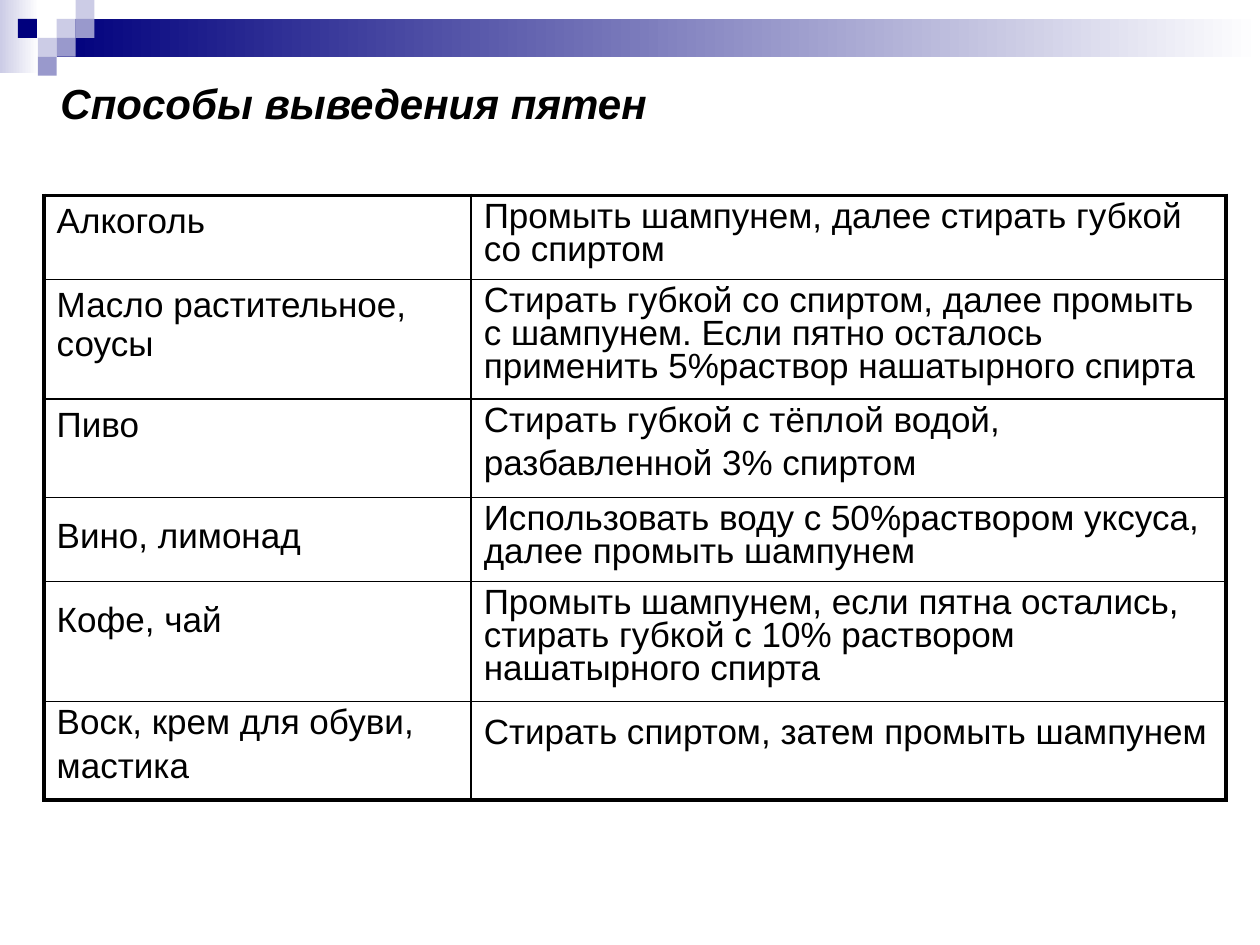
from dataclasses import dataclass

from lxml import etree
from pptx import Presentation
from pptx.dml.color import RGBColor
from pptx.enum.shapes import MSO_SHAPE
from pptx.oxml.ns import qn
from pptx.util import Inches, Pt

RECTANGLE = MSO_SHAPE.RECTANGLE


@dataclass(frozen=True)
class Theme:
    font: str = "Arial"
    ink: str = "000000"
    paper: str = "FFFFFF"
    navy: str = "00007D"
    violet: str = "9999CC"
    lilac: str = "CCCCE6"
    title_size: int = 24
    body_size: int = 20
    space_size: int = 28
    outer_line: float = 2.25
    inner_line: float = 1
    tight: float = 0.85


THEME = Theme()

TITLE = "Способы выведения пятен"

# Each cell: text, tight line spacing, taller closing space
ROWS = [
    (("Алкоголь", False, False),
     ("Промыть шампунем, далее стирать губкой со спиртом", True, False)),
    (("Масло растительное, соусы", False, False),
     ("Стирать губкой со спиртом, далее промыть с шампунем. Если пятно "
      "осталось применить 5%раствор нашатырного спирта", True, False)),
    (("Пиво", False, False),
     ("Стирать губкой с тёплой водой, разбавленной 3% спиртом", True, True)),
    (("Вино, лимонад", False, True),
     ("Использовать воду с 50%раствором уксуса, далее промыть шампунем",
      True, False)),
    (("Кофе, чай", False, True),
     ("Промыть шампунем, если пятна остались, стирать губкой с 10% раствором "
      "нашатырного спирта", True, False)),
    (("Воск, крем для обуви, мастика", True, True),
     ("Стирать спиртом, затем промыть шампунем", True, True)),
]
COLUMN_WIDTHS = [3.39, 5.99]
ROW_HEIGHTS = [0.66, 0.95, 0.78] * 2
TABLE_LEFT, TABLE_TOP = 0.35, 1.55

# Left, top, width, height, colour at the left end
FADING_BANDS = [
    (0, 0, 0.31, 0.58, THEME.lilac),
    (0.45, 0.15, 9.55, 0.3, THEME.navy),
]
TILE = 0.15
# Left and top counted in tiles, colour
TILES = [
    (3, 1, THEME.lilac),
    (4, 0, THEME.lilac),
    (4, 1, THEME.violet),
    (2, 2, THEME.lilac),
    (0.95, 1, THEME.navy),
    (3, 2, THEME.violet),
    (2, 3, THEME.violet),
]


def color(value):
    return RGBColor.from_string(value)


def add_rectangle(page, left, top, width, height):
    box = page.shapes.add_shape(
        RECTANGLE, Inches(left), Inches(top), Inches(width), Inches(height))
    box.shadow.inherit = False
    box.line.fill.background()
    return box


def add_decoration(page):
    for *place, start in FADING_BANDS:
        fill = add_rectangle(page, *place).fill
        fill.gradient()
        fill.gradient_angle = 0
        for stop, shade in zip(fill.gradient_stops, (start, THEME.paper)):
            stop.color.rgb = color(shade)
    for column, row, shade in TILES:
        fill = add_rectangle(page, column * TILE, row * TILE, TILE, TILE).fill
        fill.solid()
        fill.fore_color.rgb = color(shade)


def add_span(para, text, size, emphasis=False):
    span = para.add_run()
    span.text = text
    span.font.name = THEME.font
    span.font.size = Pt(size)
    span.font.color.rgb = color(THEME.ink)
    span.font.bold = span.font.italic = emphasis


def add_title(page):
    box = page.shapes.add_textbox(
        Inches(0.27), Inches(0.64), Inches(9.45), Inches(0.6))
    frame = box.text_frame
    frame.word_wrap = True
    frame.margin_left = Inches(0.21)
    para = frame.paragraphs[0]
    para.line_spacing = 0.8
    add_span(para, TITLE, THEME.title_size, emphasis=True)


def set_borders(cell, widths):
    """Draw the cell's edges; widths maps lnL, lnR, lnT, lnB to points."""
    properties = cell._tc.get_or_add_tcPr()
    for index, (edge, width) in enumerate(widths.items()):
        line = etree.Element(qn(f"a:{edge}"), w=str(Pt(width)))
        fill = etree.SubElement(line, qn("a:solidFill"))
        etree.SubElement(fill, qn("a:srgbClr"), val=THEME.ink)
        properties.insert(index, line)


def add_stain_table(page):
    table = page.shapes.add_table(
        len(ROWS), len(COLUMN_WIDTHS), Inches(TABLE_LEFT), Inches(TABLE_TOP),
        Inches(sum(COLUMN_WIDTHS)), Inches(sum(ROW_HEIGHTS))).table
    table.first_row = table.horz_banding = False
    for column, width in zip(table.columns, COLUMN_WIDTHS):
        column.width = Inches(width)
    for row, height in zip(table.rows, ROW_HEIGHTS):
        row.height = Inches(height)

    last_row, last_column = len(ROWS) - 1, len(COLUMN_WIDTHS) - 1
    for r, row in enumerate(ROWS):
        for c, (text, is_tight, has_tall_space) in enumerate(row):
            cell = table.cell(r, c)
            cell.fill.background()
            para = cell.text_frame.paragraphs[0]
            if is_tight:
                para.line_spacing = THEME.tight
            add_span(para, text, THEME.body_size)
            if has_tall_space:
                add_span(para, " ", THEME.space_size)
            is_outer = {"lnL": c == 0, "lnR": c == last_column,
                        "lnT": r == 0, "lnB": r == last_row}
            set_borders(cell, {
                edge: THEME.outer_line if outer else THEME.inner_line
                for edge, outer in is_outer.items()})


def main():
    deck = Presentation()
    deck.slide_width, deck.slide_height = Inches(10), Inches(7.5)
    page = deck.slides.add_slide(deck.slide_layouts[6])
    add_decoration(page)
    add_title(page)
    add_stain_table(page)
    deck.save("out.pptx")


if __name__ == "__main__":
    main()
